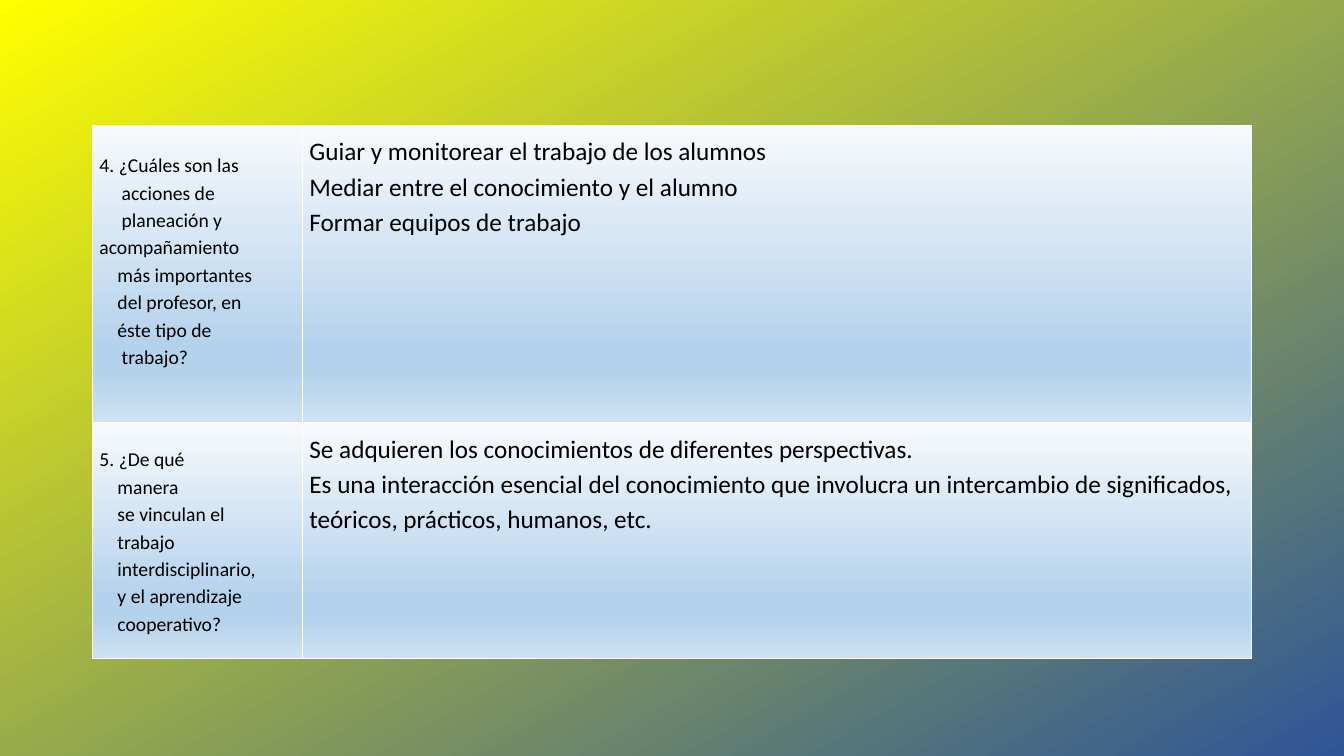
from lxml.etree import SubElement
from pptx import Presentation
from pptx.dml.color import RGBColor
from pptx.enum.text import MSO_ANCHOR
from pptx.oxml import parse_xml
from pptx.oxml.ns import nsdecls, qn
from pptx.util import Inches, Pt

GRID_COLUMNS, GRID_ROWS = 160, 90
NARROW, WIDE = 2.15, 2.65

QUESTIONS = [
    [("4. ¿Cuáles son las", 0), ("acciones de", WIDE), ("planeación y acompañamiento", WIDE),
     ("más importantes", NARROW), ("del profesor, en", NARROW), ("éste tipo de", NARROW),
     ("trabajo?", WIDE)],
    [("5. ¿De qué", 0), ("manera", NARROW), ("se vinculan el", NARROW), ("trabajo", NARROW),
     ("interdisciplinario,", NARROW), ("y el aprendizaje", NARROW), ("cooperativo?", NARROW)],
]
ANSWERS = [
    [("Guiar y monitorear el trabajo de los alumnos", 0),
     ("Mediar entre el conocimiento y el alumno", 0),
     ("Formar equipos de trabajo", 0)],
    [("Se adquieren los conocimientos de diferentes perspectivas.", 0),
     ("Es una interacción esencial del conocimiento que involucra un intercambio de "
      "significados, teóricos, prácticos, humanos, etc.", 0)],
]
QUESTION_BOTTOM_INSETS = [4.1, 0.84]


def color(hex_string):
    return RGBColor.from_string(hex_string)


def set_values(target, values):
    for name, value in values.items():
        setattr(target, name, value)


class SlideBuilder:
    """Hold the shared style and the current slide, and draw elements on its grid."""

    font_name = "Calibri"
    text_color = "000000"
    border_color = "FFFFFF"
    line_spacing = 1.15
    inset = 0.84
    cell_stops = [(0, "F7FAFD"), (74, "B5D2EC"), (83, "B5D2EC"), (100, "CEE1F2")]

    def __init__(self, presentation):
        self.column = presentation.slide_width / GRID_COLUMNS
        self.row = presentation.slide_height / GRID_ROWS
        self.slide = presentation.slides.add_slide(presentation.slide_layouts[6])

    def across(self, columns):
        return round(columns * self.column)

    def down(self, rows):
        return round(rows * self.row)

    def gradient(self, fill, parent, stops, angle):
        fill.gradient()
        old_gradient = parent.find(".//" + qn("a:gradFill"))
        stop_xml = "".join(
            f'<a:gs pos="{position * 1000}"><a:srgbClr val="{color(shade)}"/></a:gs>'
            for position, shade in stops)
        new_gradient = parse_xml(
            f'<a:gradFill {nsdecls("a")} rotWithShape="1"><a:gsLst>{stop_xml}</a:gsLst>'
            f'<a:lin ang="{angle * 60000}" scaled="0"/></a:gradFill>')
        old_gradient.getparent().replace(old_gradient, new_gradient)

    def background(self, stops, angle):
        self.gradient(self.slide.background.fill, self.slide.element, stops, angle)

    def borders(self, properties):
        for index, side in enumerate(("lnL", "lnR", "lnT", "lnB")):
            line = SubElement(properties, qn(f"a:{side}"), w=str(Pt(1)))
            solid = SubElement(line, qn("a:solidFill"))
            SubElement(solid, qn("a:srgbClr"), val=str(color(self.border_color)))
            properties.insert(index, line)

    def text(self, frame, lines, size):
        for index, (words, indent) in enumerate(lines):
            paragraph = frame.add_paragraph() if index else frame.paragraphs[0]
            paragraph.line_spacing = self.line_spacing
            run = paragraph.add_run()
            run.text = words
            set_values(run.font, {"name": self.font_name, "size": Pt(size)})
            run.font.color.rgb = color(self.text_color)
            if indent:
                properties = paragraph._p.get_or_add_pPr()
                properties.set("marL", "0")
                properties.set("indent", str(self.across(indent)))

    def cell(self, cell, lines, size, anchor, bottom):
        set_values(cell, {
            "margin_left": self.across(self.inset),
            "margin_right": self.across(self.inset),
            "margin_top": self.down(self.inset),
            "margin_bottom": self.down(bottom),
            "vertical_anchor": anchor,
        })
        self.text(cell.text_frame, lines, size)
        properties = cell._tc.get_or_add_tcPr()
        self.gradient(cell.fill, properties, self.cell_stops, 90)
        self.borders(properties)

    def table(self, left, top, widths, heights):
        table = self.slide.shapes.add_table(
            len(heights), len(widths), self.across(left), self.down(top),
            self.across(sum(widths)), self.down(sum(heights))).table
        set_values(table, {"first_row": False, "horz_banding": False})
        for column, width in zip(table.columns, widths):
            column.width = self.across(width)
        for row, height in zip(table.rows, heights):
            row.height = self.down(height)
        return table


def main():
    presentation = Presentation()
    set_values(presentation, {"slide_width": Inches(13.33), "slide_height": Inches(7.5)})
    builder = SlideBuilder(presentation)
    builder.background([(0, "2F5597"), (100, "FFFF00")], 240)
    table = builder.table(11, 14.9, [25, 113], [35.4, 28.1])
    for index, (question, answer, bottom) in enumerate(
            zip(QUESTIONS, ANSWERS, QUESTION_BOTTOM_INSETS)):
        builder.cell(table.cell(index, 0), question, 14, MSO_ANCHOR.MIDDLE, bottom)
        builder.cell(table.cell(index, 1), answer, 18, MSO_ANCHOR.TOP, builder.inset)
    presentation.save("out.pptx")


if __name__ == "__main__":
    main()
